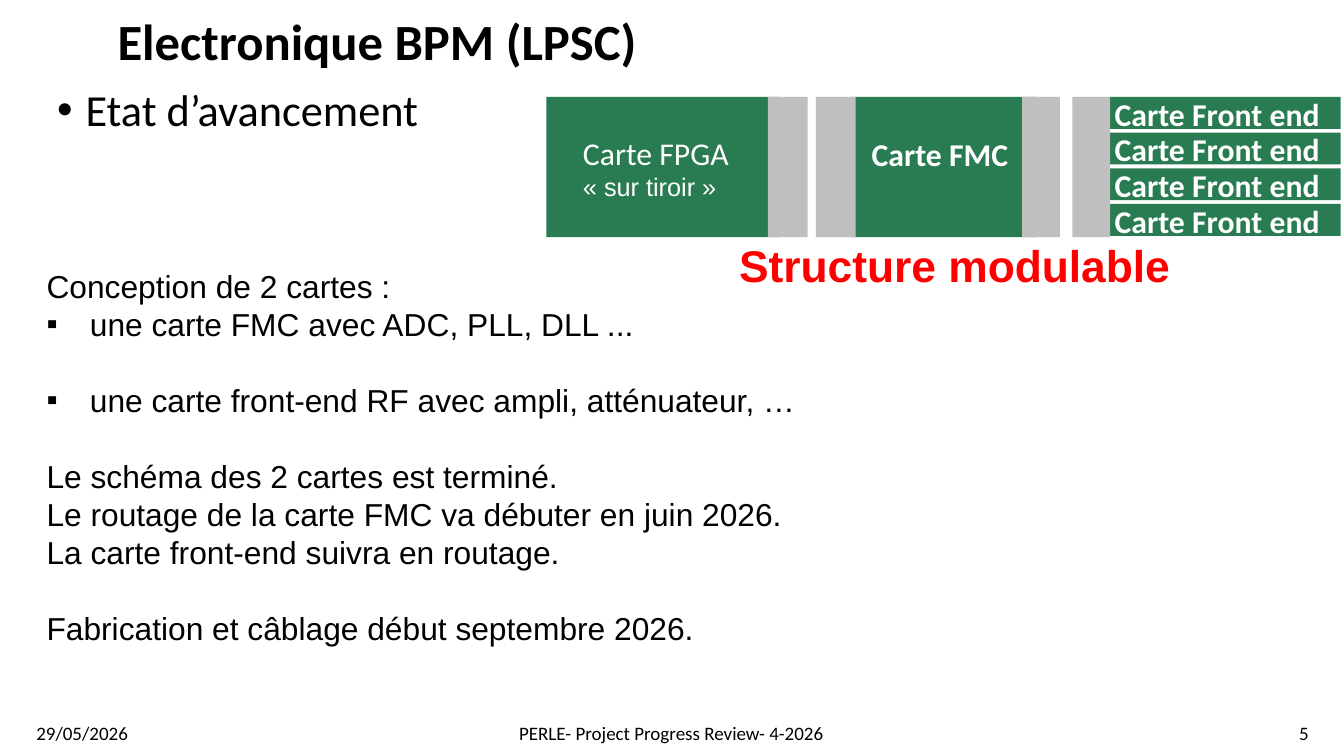
from dataclasses import dataclass

from lxml import etree
from pptx import Presentation
from pptx.dml.color import RGBColor
from pptx.enum.shapes import MSO_SHAPE
from pptx.enum.text import MSO_ANCHOR, MSO_AUTO_SIZE, PP_ALIGN
from pptx.oxml.ns import qn
from pptx.util import Inches, Pt

RECTANGLE = MSO_SHAPE.RECTANGLE
LEFT, CENTER, RIGHT = PP_ALIGN.LEFT, PP_ALIGN.CENTER, PP_ALIGN.RIGHT
TOP, MIDDLE = MSO_ANCHOR.TOP, MSO_ANCHOR.MIDDLE
NO_AUTOFIT = MSO_AUTO_SIZE.NONE


@dataclass(frozen=True)
class Theme:
    board: RGBColor = RGBColor(0x29, 0x7B, 0x52)
    connector: RGBColor = RGBColor(0xBF, 0xBF, 0xBF)
    ink: RGBColor = RGBColor(0, 0, 0)
    light: RGBColor = RGBColor(0xFF, 0xFF, 0xFF)
    accent: RGBColor = RGBColor(0xFF, 0, 0)
    heading_font: str = "Calibri"
    text_font: str = "Arial"
    title: int = 32
    large: int = 28
    text: int = 20
    small: int = 16
    footer: int = 12


THEME = Theme()

# Status lines: text, has a bullet, space before in points
STATUS = [
    ("Conception de 2 cartes :", False, 0),
    ("une carte FMC avec ADC, PLL, DLL ...", True, 0),
    ("une carte front-end RF avec ampli, atténuateur, …", True, 24),
    ("Le schéma des 2 cartes est terminé.", False, 24),
    ("Le routage de la carte FMC va débuter en juin 2026.", False, 0),
    ("La carte front-end suivra en routage.", False, 0),
    ("Fabrication et câblage début septembre 2026.", False, 24),
]

BOARD_TOP, BOARD_HEIGHT = 0.85, 1.23
FRONT_END_COUNT, FRONT_END_PITCH = 4, 0.313


def place(shape, left, top, width, height):
    shape.left, shape.top = Inches(left), Inches(top)
    shape.width, shape.height = Inches(width), Inches(height)


def add_block(slide, left, top, width, height, color):
    block = slide.shapes.add_shape(
        RECTANGLE, Inches(left), Inches(top), Inches(width), Inches(height))
    block.shadow.inherit = False
    block.fill.solid()
    block.fill.fore_color.rgb = color
    block.line.fill.background()


def add_run(paragraph, text, size, color, font, bold=False):
    run = paragraph.add_run()
    run.text = text
    run.font.size = Pt(size)
    run.font.name = font
    run.font.bold = bold
    run.font.color.rgb = color


def set_bullet(paragraph, symbol, indent):
    properties = paragraph._p.get_or_add_pPr()
    properties.set("marL", str(Inches(indent)))
    properties.set("indent", str(-Inches(indent)))
    etree.SubElement(properties, qn("a:buFont")).set("typeface", THEME.text_font)
    etree.SubElement(properties, qn("a:buChar")).set("char", symbol)


def add_text_frame(slide, left, top, width, height, anchor=TOP,
                   wrap=True, inset=True):
    box = slide.shapes.add_textbox(
        Inches(left), Inches(top), Inches(width), Inches(height))
    frame = box.text_frame
    frame.word_wrap = wrap
    frame.auto_size = NO_AUTOFIT
    frame.vertical_anchor = anchor
    if not inset:
        frame.margin_left = frame.margin_right = 0
        frame.margin_top = frame.margin_bottom = 0
    return frame


def add_board_label(slide, left, top, width, text):
    frame = add_text_frame(slide, left, top, width, 0.34, wrap=False, inset=False)
    add_run(frame.paragraphs[0], text, THEME.text, THEME.light,
            THEME.heading_font, bold=True)


def add_footer(slide, left, width, text, align):
    frame = add_text_frame(slide, left, 6.25, width, 0.35, MIDDLE)
    frame.paragraphs[0].alignment = align
    add_run(frame.paragraphs[0], text, THEME.footer, THEME.ink, THEME.heading_font)


def fill_placeholder(placeholder, bounds, text, size, anchor, bold=False,
                     bullet=None):
    place(placeholder, *bounds)
    frame = placeholder.text_frame
    frame.auto_size = NO_AUTOFIT
    frame.vertical_anchor = anchor
    paragraph = frame.paragraphs[0]
    paragraph.alignment = LEFT
    paragraph.line_spacing = 0.9
    paragraph.space_before = Pt(0)
    if bullet:
        set_bullet(paragraph, bullet, 0.25)
    add_run(paragraph, text, size, THEME.ink, THEME.heading_font, bold)


def add_status(slide):
    frame = add_text_frame(slide, 0.31, 2.29, 10.17, 3.47)
    for index, (text, bulleted, gap) in enumerate(STATUS):
        paragraph = frame.add_paragraph() if index else frame.paragraphs[0]
        paragraph.space_before = Pt(gap)
        if bulleted:
            set_bullet(paragraph, "▪", 0.38)
        add_run(paragraph, text, THEME.text, THEME.ink, THEME.text_font)


def add_board_diagram(slide):
    # FPGA and FMC boards
    for left, width in ((4.79, 2.04), (7.46, 1.63)):
        add_block(slide, left, BOARD_TOP, width, BOARD_HEIGHT, THEME.board)

    # Stack of front-end boards
    for index in range(FRONT_END_COUNT):
        top = BOARD_TOP + index * FRONT_END_PITCH
        add_block(slide, 9.73, top, 2.02, 0.28, THEME.board)
        add_board_label(slide, 9.77, top - 0.02, 1.81, "Carte Front end")

    # Connectors between the boards
    for left, width in ((6.73, 0.35), (7.15, 0.35), (8.96, 0.33), (9.4, 0.33)):
        add_block(slide, left, BOARD_TOP, width, BOARD_HEIGHT, THEME.connector)

    # Board names
    fpga = add_text_frame(slide, 5.11, 1.17, 2, 0.61, inset=False)
    add_run(fpga.paragraphs[0], "Carte FPGA", THEME.text, THEME.light,
            THEME.heading_font)
    add_run(fpga.add_paragraph(), "« sur tiroir »", THEME.small, THEME.light,
            THEME.text_font)
    add_board_label(slide, 7.64, 1.18, 1.21, "Carte FMC")

    # Caption
    caption = add_text_frame(slide, 6.38, 2.04, 4.02, 0.57, wrap=False)
    add_run(caption.paragraphs[0], "Structure modulable", THEME.large,
            THEME.accent, THEME.text_font, bold=True)


def main():
    deck = Presentation()
    deck.slide_width, deck.slide_height = Inches(11.78), Inches(6.63)
    slide = deck.slides.add_slide(deck.slide_layouts[1])

    # Heading and topic
    fill_placeholder(slide.shapes.title, (0.93, 0.06, 10.47, 0.65),
                     "Electronique BPM (LPSC)", THEME.title, MIDDLE, bold=True)
    fill_placeholder(slide.placeholders[1], (0.4, 0.72, 11.02, 0.87),
                     "Etat d’avancement", THEME.large, TOP, bullet="•")

    add_board_diagram(slide)
    add_status(slide)

    # Footer
    add_footer(slide, 0.22, 1.34, "29/05/2026", LEFT)
    add_footer(slide, 3.21, 5.35, "PERLE- Project Progress Review- 4-2026", CENTER)
    add_footer(slide, 10.77, 0.8, "5", RIGHT)

    deck.save("out.pptx")


if __name__ == "__main__":
    main()
